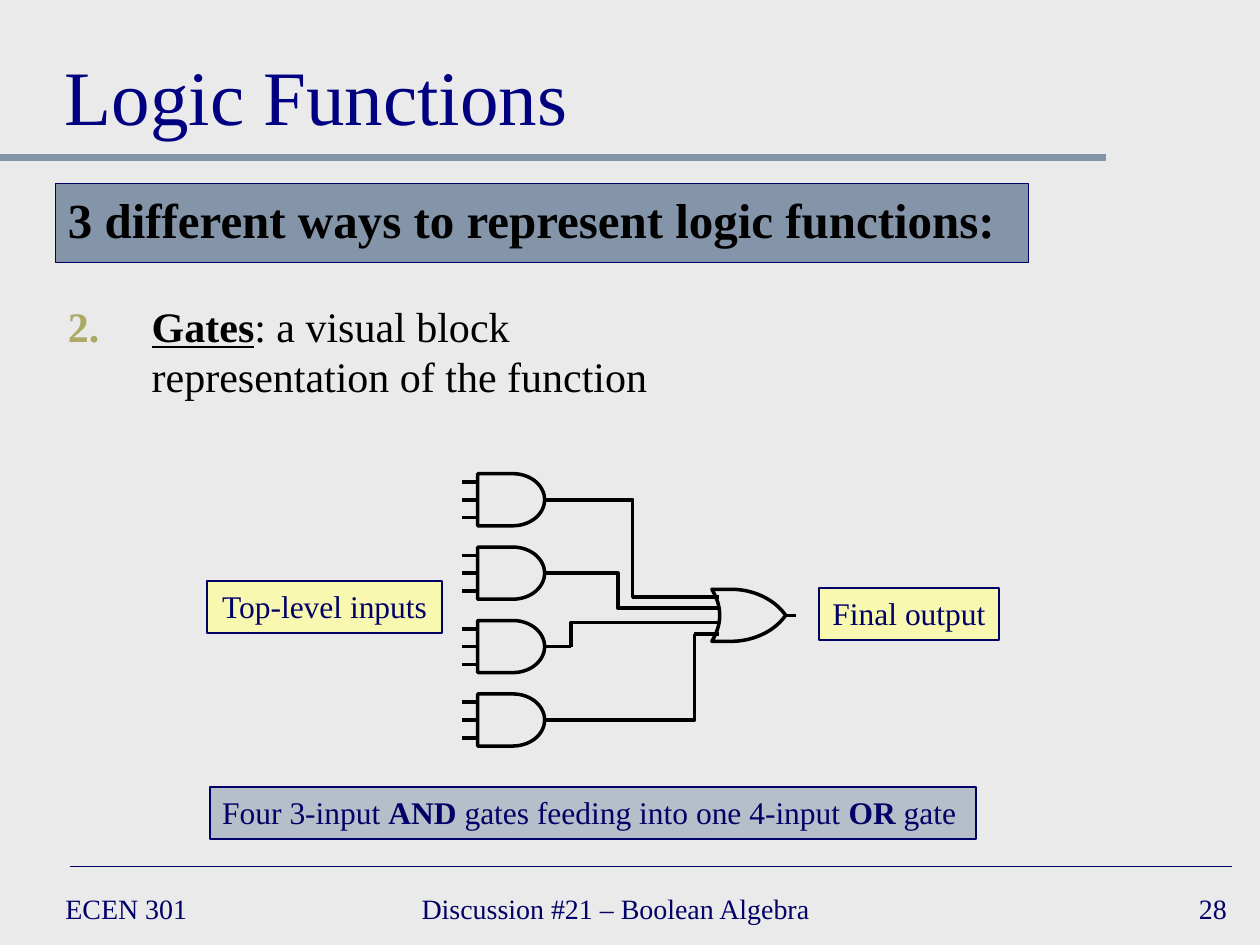
from math import cos, pi, sin

from lxml import etree
from pptx import Presentation
from pptx.dml.color import RGBColor
from pptx.enum.shapes import MSO_CONNECTOR as Link, MSO_SHAPE as Shape
from pptx.enum.text import MSO_ANCHOR as Anchor, PP_ALIGN as Align
from pptx.oxml.ns import qn
from pptx.util import Cm, Pt

COLORS = {
    "page": "EAEAEA", "navy": "000066", "title": "000080", "slate": "8495A9",
    "yellow": "FFFF99", "black": "000000", "number": "ACA964",
}
FONT = "Times New Roman"
GATE_HEIGHT = 1.05
GATE_PITCH = 1.48
GATE_LEFT, GATE_TOP = 9.63, 9.55
OUTPUT_X = 11.51
OR_TOP = 11.88
OR_INPUT_X = 14.0
OR_INPUTS = (12.04, 12.26, 12.55, 12.78)


def color(name):
    return RGBColor.from_string(COLORS[name])


def write(box, spans, size, ink="navy", align=Align.LEFT, anchor=Anchor.TOP,
          wrap=True, hanging=0, number=None):
    """Fill a box with one paragraph; each span is (text, style), style in 'b', 'u'."""
    frame = box.text_frame
    frame.word_wrap = wrap
    frame.vertical_anchor = anchor
    para = frame.paragraphs[0]
    para.alignment = align
    props = para._p.get_or_add_pPr()
    if hanging:
        props.set("marL", str(Cm(hanging)))
        props.set("indent", str(-Cm(hanging)))
    if number:
        bullet_color = etree.SubElement(props, qn("a:buClr"))
        etree.SubElement(bullet_color, qn("a:srgbClr"), val=COLORS["number"])
        etree.SubElement(props, qn("a:buAutoNum"), type="arabicPeriod",
                         startAt=str(number))
    for text, style in spans:
        span = para.add_run()
        span.text = text
        span.font.name = FONT
        span.font.size = Pt(size)
        span.font.color.rgb = color(ink)
        span.font.bold = "b" in style
        span.font.underline = "u" in style


def add_text(page, place, spans, size, **text_format):
    box = page.shapes.add_textbox(*map(Cm, place))
    write(box, spans, size, **text_format)


def add_panel(page, place, spans, size, fill, opacity=100, width=1, **text_format):
    panel = page.shapes.add_shape(Shape.RECTANGLE, *map(Cm, place))
    panel.shadow.inherit = False
    panel.fill.solid()
    panel.fill.fore_color.rgb = color(fill)
    if opacity < 100:
        tint = panel._element.spPr.find(qn("a:solidFill")).find(qn("a:srgbClr"))
        etree.SubElement(tint, qn("a:alpha"), val=str(opacity * 1000))
    panel.line.color.rgb = color("navy")
    panel.line.width = Pt(width)
    write(panel, spans, size, **text_format)


def add_line(shapes, start, end, ink="black", width=2, bend=None):
    """Draw a straight line, or an elbow that turns at the share 'bend' of its width."""
    kind = Link.STRAIGHT if bend is None else Link.ELBOW
    line = shapes.add_connector(kind, *map(Cm, (*start, *end)))
    line.line.color.rgb = color(ink)
    line.line.width = Pt(width)
    props = line._element.spPr
    etree.SubElement(props, qn("a:effectLst"))
    if bend is not None:
        guides = props.find(qn("a:prstGeom")).find(qn("a:avLst"))
        etree.SubElement(guides, qn("a:gd"), name="adj1",
                         fmla=f"val {round(bend * 100000)}")


def add_outline(shapes, points):
    first, *rest = [(Cm(x), Cm(y)) for x, y in points]
    builder = shapes.build_freeform(*first)
    builder.add_line_segments(rest, close=True)
    outline = builder.convert_to_shape()
    outline.shadow.inherit = False
    outline.fill.background()
    outline.line.color.rgb = color("black")
    outline.line.width = Pt(2)


def add_and_gate(shapes, top):
    radius = GATE_HEIGHT / 2
    middle = top + radius
    angles = [pi * step / 30 - pi / 2 for step in range(31)]
    arc = [(10.34 + 0.64 * cos(a), middle + radius * sin(a)) for a in angles]
    add_outline(shapes, [(GATE_LEFT, top), *arc, (GATE_LEFT, top + GATE_HEIGHT)])
    for offset in (-0.36, 0, 0.36):
        add_line(shapes, (GATE_LEFT, middle + offset), (9.32, middle + offset))
    add_line(shapes, (11.0, middle), (OUTPUT_X, middle))


def add_or_gate(shapes):
    left, shoulder, tip = 14.35, 14.73, 15.84
    half = GATE_HEIGHT / 2
    middle = OR_TOP + half
    angles = [pi / 3 * step / 20 for step in range(21)]
    curve = [(shoulder + (tip - shoulder) * sin(a) / sin(pi / 3),
              half * (2 * cos(a) - 1)) for a in angles]
    upper = [(x, middle - rise) for x, rise in curve]
    lower = [(x, middle + rise) for x, rise in reversed(curve)]
    shares = [step / 20 for step in range(21)]
    back = [(left + 0.64 * u * (1 - u), OR_TOP + GATE_HEIGHT * (1 - u)) for u in shares]
    add_outline(shapes, upper + lower + back)
    for y in OR_INPUTS:
        add_line(shapes, (14.49, y), (OR_INPUT_X, y))
    add_line(shapes, (tip, middle), (16.05, middle))


def add_circuit(page):
    shapes = page.shapes.add_group_shape().shapes
    bends = (0.5, 0.38, 0, 1)
    for row, (input_y, bend) in enumerate(zip(OR_INPUTS, bends)):
        top = GATE_TOP + row * GATE_PITCH
        add_and_gate(shapes, top)
        add_line(shapes, (OUTPUT_X, top + GATE_HEIGHT / 2), (OR_INPUT_X, input_y),
                 bend=bend)
    add_or_gate(shapes)


def add_frame(page):
    add_line(page.shapes, (0, 3.17), (22.3, 3.17), ink="slate", width=4)
    add_line(page.shapes, (1.42, 17.47), (24.84, 17.47), ink="navy", width=1)
    footers = (
        (1.07, 5.5, "ECEN 301", Align.LEFT),
        (8.25, 9.74, "Discussion #21 – Boolean Algebra", Align.LEFT),
        (19.69, 5.29, "28", Align.RIGHT),
    )
    for left, width, text, align in footers:
        add_text(page, (left, 17.78, width, 1.06), [(text, "")], 16,
                 align=align, anchor=Anchor.MIDDLE)


def main():
    deck = Presentation()
    deck.slide_width, deck.slide_height = Cm(25.4), Cm(19.05)
    page = deck.slides.add_slide(deck.slide_layouts[6])
    page.background.fill.solid()
    page.background.fill.fore_color.rgb = color("page")

    add_frame(page)
    add_text(page, (1.06, 0.42, 23.28, 2.54), [("Logic Functions", "")], 44,
             ink="title", anchor=Anchor.BOTTOM)
    add_panel(page, (1.12, 3.7, 19.61, 1.59),
              [("3 different ways to represent logic functions:", "b")], 28,
              fill="slate", width=0.75, ink="black", hanging=0.95)
    add_text(page, (1.12, 5.93, 13.05, 2.01),
             [("Gates", "bu"), (": a visual block representation of the function", "")],
             24, ink="black", hanging=1.69, number=2)
    add_circuit(page)
    add_panel(page, (4.23, 15.87, 15.45, 1.05),
              [("Four 3-input ", ""), ("AND", "b"),
               (" gates feeding into one 4-input ", ""), ("OR", "b"), (" gate", "")],
              18, fill="slate", opacity=50)
    labels = (("Top-level inputs", 4.18, 11.71, 4.73),
              ("Final output", 16.51, 11.86, 3.63))
    for text, left, top, width in labels:
        add_panel(page, (left, top, width, 1.05), [(text, "")], 18, fill="yellow",
                  opacity=70, align=Align.CENTER, wrap=False)
    deck.save("out.pptx")


if __name__ == "__main__":
    main()
